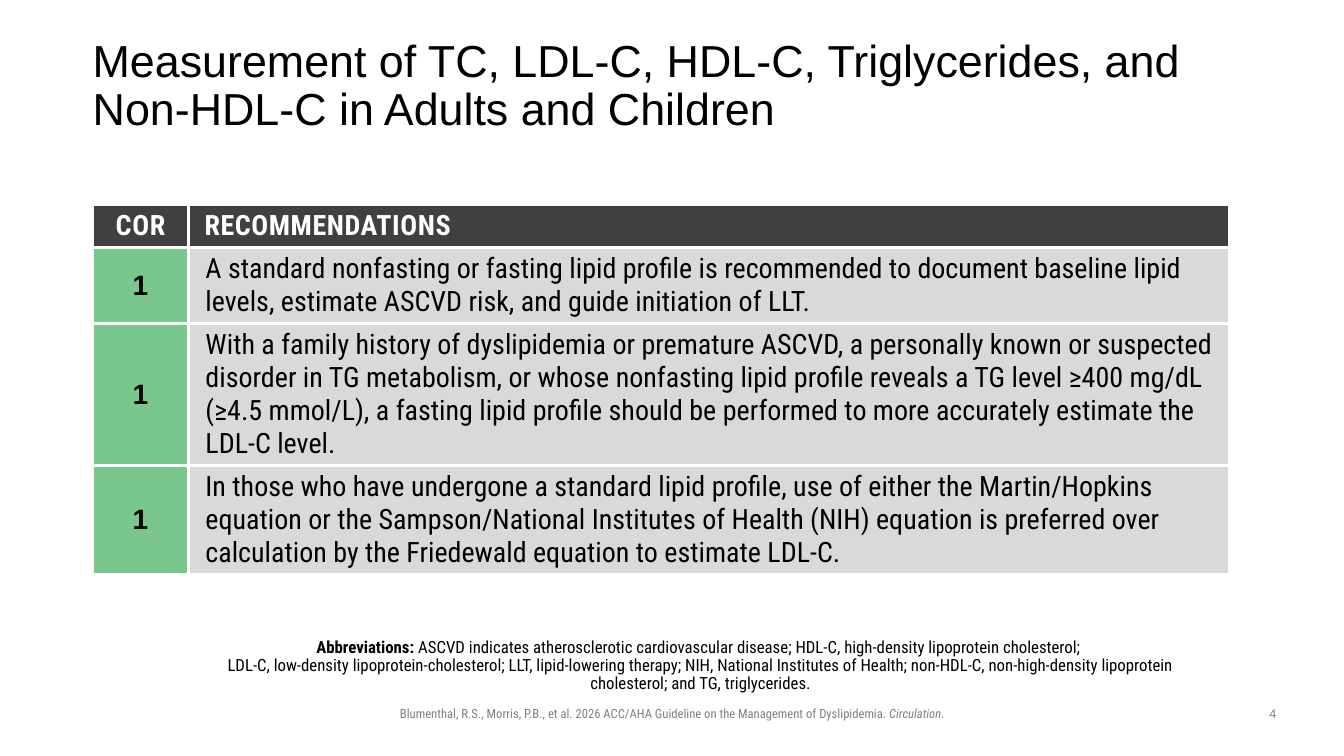
from lxml.etree import SubElement
from pptx import Presentation
from pptx.dml.color import RGBColor
from pptx.enum.text import MSO_ANCHOR as Anchor, MSO_AUTO_SIZE as AutoSize, PP_ALIGN as Align
from pptx.oxml import parse_xml
from pptx.oxml.ns import nsdecls, qn
from pptx.util import Pt

COLORS = {"text": "000000", "white": "FFFFFF", "header": "404040",
          "class_1": "79C78D", "body": "D9D9D9", "muted": "808080"}
SANS, CONDENSED = "Arial", "Roboto Condensed"
LINE_HEIGHT, ROW_PADDING, COR_WIDTH = 23.5, 7.2, 68.4

RECOMMENDATIONS = [
    ("1", "A standard nonfasting or fasting lipid profile is recommended to document baseline "
          "lipid levels, estimate ASCVD risk, and guide initiation of LLT.", 2),
    ("1", "With a family history of dyslipidemia or premature ASCVD, a personally known or "
          "suspected disorder in TG metabolism, or whose nonfasting lipid profile reveals a TG "
          "level ≥400 mg/dL (≥4.5 mmol/L), a fasting lipid profile should be performed to more "
          "accurately estimate the LDL-C level.", 4),
    ("1", "In those who have undergone a standard lipid profile, use of either the "
          "Martin/Hopkins equation or the Sampson/National Institutes of Health (NIH) equation "
          "is preferred over calculation by the Friedewald equation to estimate LDL-C.", 3),
]


def style_runs(p, size, name, color, bold=False):
    """Format every run of a paragraph."""
    for r in p.runs:
        r.font.size, r.font.name, r.font.bold = Pt(size), name, bold
        r.font.color.rgb = RGBColor.from_string(COLORS[color])


def set_insets(frame, left, top, right, bottom):
    """Set the four text margins of a text frame or cell."""
    frame.margin_left, frame.margin_top = Pt(left), Pt(top)
    frame.margin_right, frame.margin_bottom = Pt(right), Pt(bottom)


def add_title(s, x, y, w, h, text):
    """Place and format the slide title."""
    sp = s.shapes.title
    sp.left, sp.top, sp.width, sp.height = Pt(x), Pt(y), Pt(w), Pt(h)
    tf = sp.text_frame
    tf.text = text
    tf.auto_size, tf.vertical_anchor = AutoSize.NONE, Anchor.MIDDLE
    set_insets(tf, 0, 0, 0, 0)
    p = tf.paragraphs[0]
    p.alignment, p.line_spacing = Align.LEFT, 0.9
    style_runs(p, 32, SANS, "text")


def format_cell(cell, text, fill, name, color, bold, align, indent=0, spacing=0):
    """Fill a table cell and give it white borders and styled text."""
    cell.text = text
    cell.vertical_anchor = Anchor.MIDDLE
    cell.fill.solid()
    cell.fill.fore_color.rgb = RGBColor.from_string(COLORS[fill])
    tcPr = cell._tc.get_or_add_tcPr()
    for i, side in enumerate(("lnL", "lnR", "lnT", "lnB")):
        tcPr.insert(i, parse_xml(
            f'<a:{side} {nsdecls("a")} w="{Pt(2.25)}"><a:solidFill>'
            f'<a:srgbClr val="{COLORS["white"]}"/></a:solidFill></a:{side}>'))
    p = cell.text_frame.paragraphs[0]
    p.alignment = align
    pPr = p._p.get_or_add_pPr()
    pPr.set("marL", str(Pt(indent)))
    pPr.set("indent", "0")
    style_runs(p, 20, name, color, bold)
    for r in p.runs:
        r._r.get_or_add_rPr().set("spc", str(round(spacing * 100)))


def add_recommendations(s, x, y, w):
    """Build the table, with each row as tall as its lines of text."""
    lines = [1] + [count for _, _, count in RECOMMENDATIONS]
    heights = [n * LINE_HEIGHT + ROW_PADDING for n in lines]
    table = s.shapes.add_table(len(lines), 2, Pt(x), Pt(y), Pt(w), Pt(sum(heights))).table
    table.columns[0].width, table.columns[1].width = Pt(COR_WIDTH), Pt(w - COR_WIDTH)
    for row, height in zip(table.rows, heights):
        row.height = Pt(height)
    format_cell(table.cell(0, 0), "COR", "header", CONDENSED, "white", True,
                Align.CENTER, spacing=0.5)
    format_cell(table.cell(0, 1), "RECOMMENDATIONS", "header", CONDENSED, "white", True,
                Align.LEFT, 4.3, 0.4)
    for i, (cor, text, _) in enumerate(RECOMMENDATIONS, 1):
        for j in range(2):
            set_insets(table.cell(i, j), 3.6, 3.6, 3.6, 3.6)
        format_cell(table.cell(i, 0), cor, "class_1", SANS, "text", True, Align.CENTER)
        format_cell(table.cell(i, 1), text, "body", CONDENSED, "text", False, Align.LEFT, 8.6)


def add_note(s, x, y, w, h, parts, size, name, color):
    """Add a centred, wrapping text box and return its text frame."""
    tf = s.shapes.add_textbox(Pt(x), Pt(y), Pt(w), Pt(h)).text_frame
    tf.word_wrap = True
    p = tf.paragraphs[0]
    p.alignment = Align.CENTER
    for part in parts:
        if part == "\n":
            p.add_line_break()
        else:
            p.add_run().text = part
    style_runs(p, size, name, color)
    return tf


def add_abbreviations(s, x, y, w, h):
    """Add the list of abbreviations under the table."""
    parts = ["Abbreviations: ",
             "ASCVD indicates atherosclerotic cardiovascular disease; HDL-C, high-density "
             "lipoprotein cholesterol; ", "\n",
             "LDL-C, low-density lipoprotein-cholesterol; LLT, lipid-lowering therapy; NIH, "
             "National Institutes of Health; non-HDL-C, non-high-density lipoprotein "
             "cholesterol; and TG, triglycerides."]
    tf = add_note(s, x, y, w, h, parts, 12, CONDENSED, "text")
    tf.vertical_anchor = Anchor.BOTTOM
    set_insets(tf, 0, 3.6, 7.2, 3.6)
    p = tf.paragraphs[0]
    p.line_spacing = 0.9
    p.runs[0].font.bold = True
    for br in p._p.findall(qn("a:br")):
        SubElement(br, qn("a:rPr")).set("sz", "1200")


def add_footer(s, x, y, w, h):
    """Add the citation and the slide number along the bottom."""
    parts = ["Blumenthal, R.S., Morris, P.B., et al. 2026 ACC/AHA Guideline on the Management "
             "of Dyslipidemia. ", "Circulation", "."]
    tf = add_note(s, x, y, w, h, parts, 9, CONDENSED, "muted")
    tf.paragraphs[0].runs[1].font.italic = True
    add_note(s, x + 724.3, y, 30.2, h, ["4"], 9, SANS, "muted")


def main():
    """Build and save the slide."""
    prs = Presentation()
    prs.slide_width, prs.slide_height = Pt(960), Pt(540)
    s = prs.slides.add_slide(prs.slide_layouts[5])
    add_title(s, 66.2, 28.8, 828, 67,
              "Measurement of TC, LDL-C, HDL-C, Triglycerides, and Non-HDL-C in Adults and Children")
    add_recommendations(s, 66.2, 146.2, 812.2)
    add_abbreviations(s, 135.4, 451.4, 737.3, 47.5)
    add_footer(s, 169.9, 500.4, 620.6, 18)
    prs.save("out.pptx")


if __name__ == "__main__":
    main()
